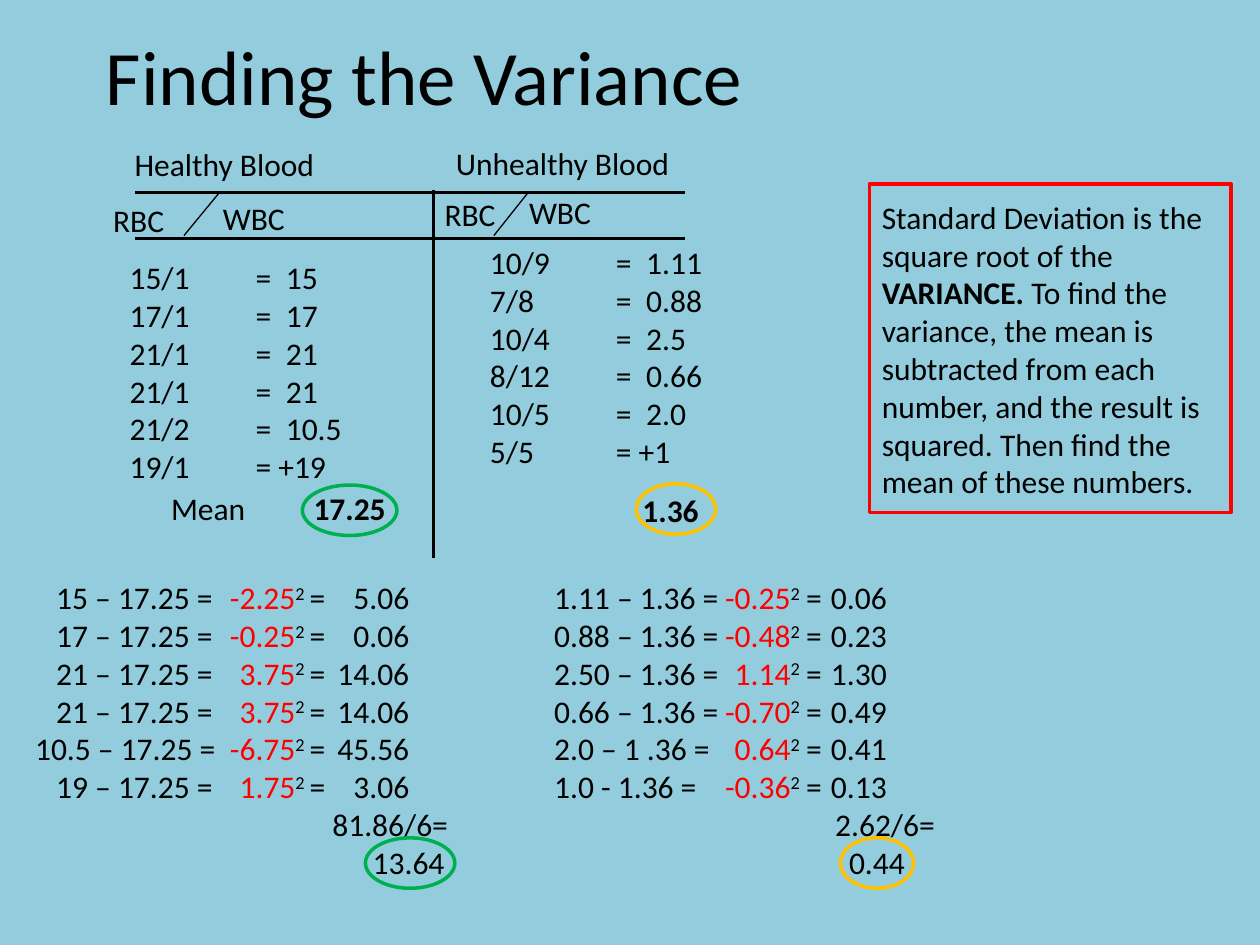
from dataclasses import dataclass

from lxml import etree
from pptx import Presentation
from pptx.dml.color import RGBColor
from pptx.enum.shapes import MSO_CONNECTOR, MSO_SHAPE
from pptx.enum.text import MSO_ANCHOR, MSO_AUTO_SIZE, PP_ALIGN
from pptx.oxml.ns import qn
from pptx.util import Inches, Pt

STRAIGHT = MSO_CONNECTOR.STRAIGHT
OVAL, RECTANGLE = MSO_SHAPE.OVAL, MSO_SHAPE.RECTANGLE
MIDDLE, CENTER = MSO_ANCHOR.MIDDLE, PP_ALIGN.CENTER
GROW = MSO_AUTO_SIZE.SHAPE_TO_FIT_TEXT

# The slide is a grid of 100 columns by 75 rows, each cell 0.1 inch
COLUMNS, ROWS, CELL = 100, 75, 0.1
COLORS = {"background": "93CDDD", "text": "000000", "red": "FF0000",
          "green": "00B050", "amber": "FFC000"}
FONT, BODY_SIZE, TITLE_SIZE = "Calibri", 18, 44
SUPERSCRIPT = "30000"


@dataclass
class Piece:
    text: str
    color: str = "text"
    bold: bool = False
    raised: bool = False


@dataclass
class Line:
    pieces: list[Piece]
    tabs: tuple = ()  # (column, alignment) pairs
    indent: float = 0


@dataclass
class Label:
    text: str
    box: tuple
    bold: bool = False


@dataclass
class Outline:
    shape: int
    box: tuple
    color: str


@dataclass
class Rule:
    start: tuple
    end: tuple
    width: float


@dataclass
class Ratios:
    box: tuple
    rows: list[tuple]


@dataclass
class Deviations:
    box: tuple
    tabs: tuple
    rows: list[tuple]  # expression, deviation, square
    total: str
    total_indent: float
    variance: str
    variance_indent: float


def grid(cells: float) -> int:
    return Inches(cells * CELL)


def color(name: str) -> RGBColor:
    return RGBColor.from_string(COLORS[name])


def set_tabs(paragraph, tabs: tuple) -> None:
    stops = etree.SubElement(paragraph._p.get_or_add_pPr(), qn("a:tabLst"))
    for column, alignment in tabs:
        etree.SubElement(stops, qn("a:tab"), pos=str(grid(column)), algn=alignment)


def add_text(slide, box: tuple, lines: list[Line], size: float = BODY_SIZE):
    frame = slide.shapes.add_textbox(*map(grid, box)).text_frame
    frame.word_wrap = True
    frame.auto_size = GROW
    for number, line in enumerate(lines):
        paragraph = frame.add_paragraph() if number else frame.paragraphs[0]
        if line.tabs:
            set_tabs(paragraph, line.tabs)
        if line.indent:
            paragraph._p.get_or_add_pPr().set("marL", str(grid(line.indent)))
        for piece in line.pieces:
            run = paragraph.add_run()
            run.text = piece.text
            run.font.name, run.font.size = FONT, Pt(size)
            run.font.bold = piece.bold
            run.font.color.rgb = color(piece.color)
            if piece.raised:
                run.font._element.set("baseline", SUPERSCRIPT)
    return frame


def add_outline(slide, outline: Outline) -> None:
    shape = slide.shapes.add_shape(outline.shape, *map(grid, outline.box))
    shape.shadow.inherit = False
    shape.fill.background()
    shape.line.color.rgb = color(outline.color)
    shape.line.width = Pt(2)


def add_rule(slide, rule: Rule) -> None:
    line = slide.shapes.add_connector(STRAIGHT, *map(grid, rule.start + rule.end))
    line.line.color.rgb = color("text")
    line.line.width = Pt(rule.width)
    etree.SubElement(line._element.spPr, qn("a:effectLst"))


def add_ratios(slide, ratios: Ratios) -> None:
    tabs = ((10, "l"), (12.4, "l"))
    add_text(slide, ratios.box, [Line([Piece(f"{ratio}\t{value}")], tabs)
                                 for ratio, value in ratios.rows])


def add_deviations(slide, group: Deviations) -> None:
    lines = [Line([Piece(f"\t{expression}\t"), Piece(deviation, "red"),
                   Piece("2", raised=True), Piece(f"\t=\t{square}")], group.tabs)
             for expression, deviation, square in group.rows]
    lines += [Line([Piece(group.total)], indent=group.total_indent),
              Line([Piece(group.variance)], indent=group.variance_indent)]
    add_text(slide, group.box, lines)


DEFINITION = [
    Piece("Standard Deviation is the square root of the "),
    Piece("VARIANCE. ", bold=True),
    Piece("To find the variance, the mean is subtracted from each number, "
          "and the result is squared. Then find the mean of these numbers."),
]
LABELS = [
    Label("Healthy Blood", (9.7, 11, 20, 4)),
    Label("Unhealthy Blood", (35.2, 10.9, 20, 4)),
    Label("RBC", (8, 15.5, 6.7, 4)),
    Label("WBC", (16.7, 15.3, 7.5, 4)),
    Label("RBC", (34.3, 15, 6.7, 4)),
    Label("WBC", (41, 14.8, 7.5, 4)),
    Label("Mean", (12.6, 38.3, 13.3, 4)),
    Label("17.25", (23.9, 38.3, 8.6, 4), bold=True),
    Label("1.36", (50, 38.5, 7.1, 4), bold=True),
]
OUTLINES = [
    Outline(OVAL, (24, 38.5, 7.5, 4), "green"),
    Outline(OVAL, (50.5, 38.4, 6.3, 4), "amber"),
    Outline(RECTANGLE, (69, 14.6, 28.7, 26.1), "red"),
    Outline(OVAL, (29, 66.5, 7.1, 4), "green"),
    Outline(OVAL, (66.7, 66.5, 5.8, 4), "amber"),
]
RULES = [
    Rule((10.7, 15.3), (54.4, 15.3), 1.75),
    Rule((10.7, 18.9), (54.4, 18.9), 1.75),
    Rule((34.4, 15.1), (34.4, 44.3), 1.75),
    Rule((17.4, 15.3), (14.6, 18.7), 0.75),
    Rule((41.9, 15.3), (39.2, 18.7), 0.75),
]
RATIOS = [
    Ratios((9.3, 20, 24.1, 19.2),
           [("15/1", "=\t15"), ("17/1", "=\t17"), ("21/1", "=\t21"),
            ("21/1", "=\t21"), ("21/2", "=\t10.5"), ("19/1", "= +19")]),
    Ratios((37.9, 18.8, 23.9, 19.2),
           [("10/9", "=\t1.11"), ("7/8", "=\t0.88"), ("10/4", "=\t2.5"),
            ("8/12", "=\t0.66"), ("10/5", "=\t2.0"), ("5/5", "= +1")]),
]
DEVIATIONS = [
    Deviations((1.8, 45.4, 36.1, 25.2),
               ((14.1, "r"), (21.4, "r"), (21.8, "l"), (29.7, "r")),
               [("15 – 17.25 =", "-2.25", "5.06"),
                ("17 – 17.25 =", "-0.25", "0.06"),
                ("21 – 17.25 =", "3.75", "14.06"),
                ("21 – 17.25 =", "3.75", "14.06"),
                ("10.5 – 17.25 =", "-6.75", "45.56"),
                ("19 – 17.25 =", "1.75", "3.06")],
               "81.86/6=", 23.6, "13.64", 26.8),
    Deviations((41.9, 45.4, 37.3, 25.2),
               ((1.1, "l"), (20.6, "r"), (21.1, "l"), (27.5, "r")),
               [("1.11 – 1.36 =", "-0.25", "0.06"),
                ("0.88 – 1.36 =", "-0.48", "0.23"),
                ("2.50 – 1.36 =", "1.14", "1.30"),
                ("0.66 – 1.36 =", "-0.70", "0.49"),
                ("2.0 – 1 .36 =", "0.64", "0.41"),
                ("1.0 - 1.36 =", "-0.36", "0.13")],
               "2.62/6=", 23.4, "0.44", 24.5),
]


def main() -> None:
    deck = Presentation()
    deck.slide_width, deck.slide_height = grid(COLUMNS), grid(ROWS)
    slide = deck.slides.add_slide(deck.slide_layouts[6])
    slide.background.fill.solid()
    slide.background.fill.fore_color.rgb = color("background")

    # Title
    title = add_text(slide, (-11.3, -0.3, 90, 12.5),
                     [Line([Piece("Finding the Variance")])], TITLE_SIZE)
    title.auto_size = MSO_AUTO_SIZE.NONE
    title.vertical_anchor = MIDDLE
    title.paragraphs[0].alignment = CENTER

    # Blood cell table, with the means below it
    for rule in RULES:
        add_rule(slide, rule)
    for label in LABELS:
        add_text(slide, label.box, [Line([Piece(label.text, bold=label.bold)])])
    for ratios in RATIOS:
        add_ratios(slide, ratios)

    # Squared deviations, the definition and the highlights
    for group in DEVIATIONS:
        add_deviations(slide, group)
    add_text(slide, (69, 15.2, 30.3, 25.2), [Line(DEFINITION)])
    for outline in OUTLINES:
        add_outline(slide, outline)

    deck.save("out.pptx")


if __name__ == "__main__":
    main()
